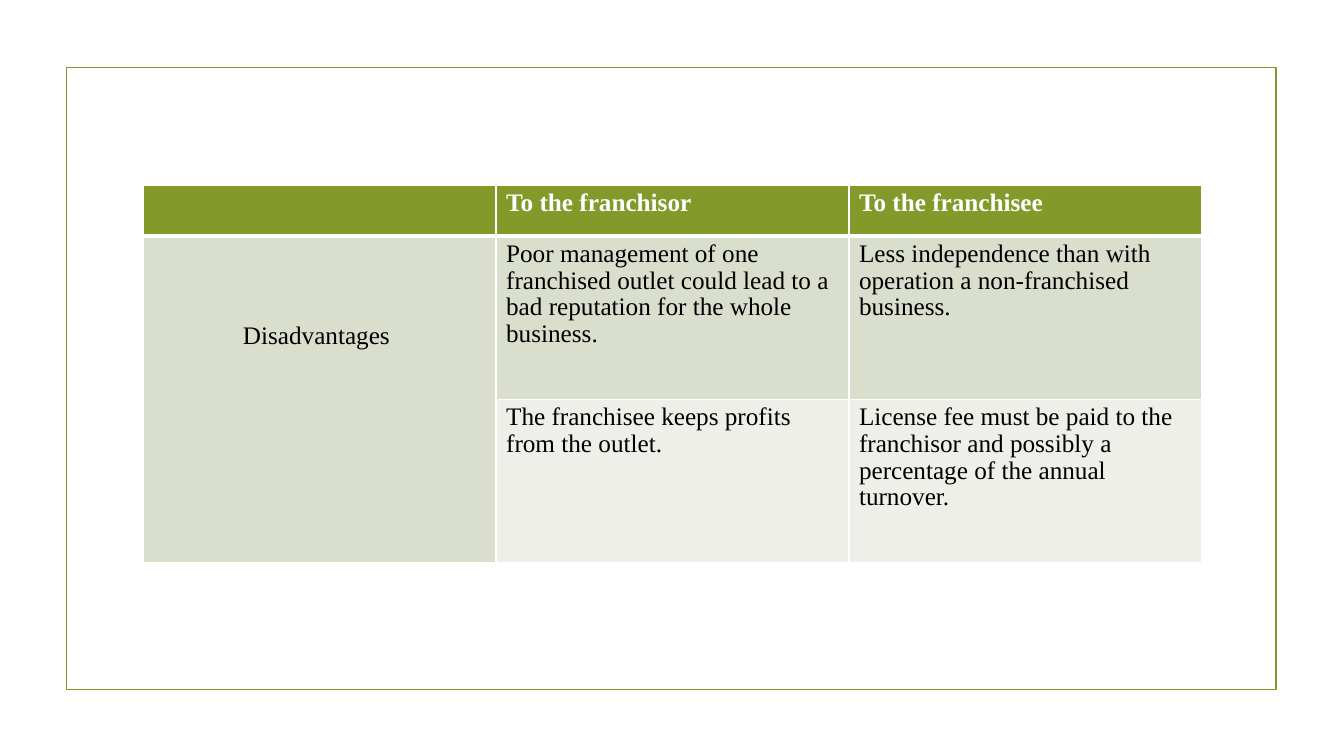
from lxml.etree import SubElement
from pptx import Presentation
from pptx.dml.color import RGBColor
from pptx.enum.shapes import MSO_SHAPE
from pptx.enum.text import PP_ALIGN
from pptx.oxml.ns import qn
from pptx.util import Inches, Pt

GREEN, WHITE, BLACK = "83992A", "FFFFFF", "000000"
FILLS = [GREEN, "D9DECD", "EDEFE8"]
ROWS = [
    ["", "To the franchisor", "To the franchisee"],
    ["Disadvantages ",
     "Poor management of one franchised outlet could lead to a bad reputation for the whole business.",
     "Less independence than with operation a non-franchised business."],
    ["",
     "The franchisee keeps profits from the outlet.",
     "License fee must be paid to the franchisor and possibly a percentage of the annual turnover."],
]


def color(code):
    return RGBColor.from_string(code)


def frame(slide, left, top, width, height):
    box = slide.shapes.add_shape(MSO_SHAPE.RECTANGLE, Inches(left), Inches(top),
                                 Inches(width), Inches(height))
    box.shadow.inherit = False
    box.fill.background()
    box.line.color.rgb = color(GREEN)
    box.line.width = Pt(1.25)


def border(cell, head):
    props = cell._tc.get_or_add_tcPr()
    for side in "LRTB":
        width = 3 if head and side == "B" else 1
        line = SubElement(props, qn(f"a:ln{side}"), w=str(Pt(width)))
        fill = SubElement(line, qn("a:solidFill"))
        SubElement(fill, qn("a:srgbClr"), val=WHITE)


def write(cell, text, head):
    para = cell.text_frame.paragraphs[0]
    para.line_spacing = 0.96
    para.font.size = Pt(18)
    if not text:
        return
    run = para.add_run()
    run.text = text
    font = run.font
    font.name = "Times New Roman"
    font.size = Pt(18)
    font.bold = head
    font.color.rgb = color(WHITE if head else BLACK)


def grid(slide, left, top, width, height):
    table = slide.shapes.add_table(len(ROWS), len(ROWS[0]), Inches(left), Inches(top),
                                   Inches(width), Inches(height)).table
    head_high = 0.5
    for col in table.columns:
        col.width = Inches(width / len(ROWS[0]))
    for r, texts in enumerate(ROWS):
        head = r == 0
        table.rows[r].height = Inches(head_high if head else (height - head_high) / 2)
        for c, text in enumerate(texts):
            cell = table.cell(r, c)
            border(cell, head)
            cell.fill.solid()
            cell.fill.fore_color.rgb = color(FILLS[r])
            write(cell, text, head)
    label = table.cell(1, 0)
    label.merge(table.cell(2, 0))
    label.margin_top = Inches(0.87)
    label.text_frame.paragraphs[0].alignment = PP_ALIGN.CENTER


def main():
    deck = Presentation()
    deck.slide_width, deck.slide_height = Inches(13.33), Inches(7.5)
    slide = deck.slides.add_slide(deck.slide_layouts[6])
    frame(slide, 0.66, 0.67, 12, 6.17)
    grid(slide, 1.42, 1.84, 10.5, 3.74)
    deck.save("out.pptx")


if __name__ == "__main__":
    main()
